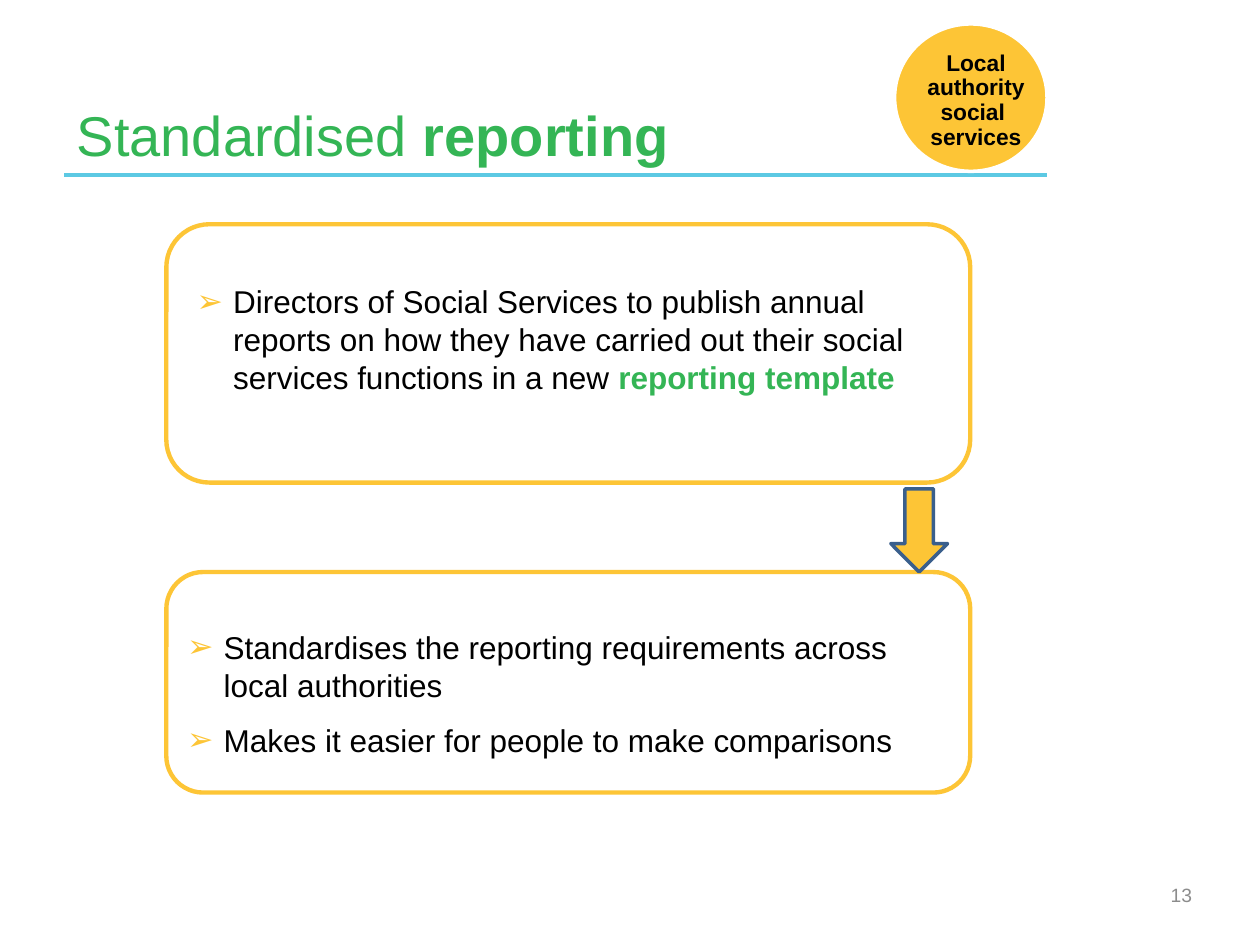
from dataclasses import dataclass
from typing import Optional

from lxml import etree
from pptx import Presentation
from pptx.dml.color import RGBColor
from pptx.enum.shapes import MSO_CONNECTOR, MSO_SHAPE
from pptx.enum.text import MSO_ANCHOR, MSO_AUTO_SIZE, PP_ALIGN
from pptx.oxml.ns import qn
from pptx.util import Inches, Pt

GREEN = RGBColor(0x34, 0xB5, 0x55)
YELLOW = RGBColor(0xFD, 0xC5, 0x36)
SKY = RGBColor(0x5C, 0xC9, 0xE3)
NAVY = RGBColor(0x3A, 0x5F, 0x8C)
GREY = RGBColor(0x8C, 0x8C, 0x8C)
BLACK = RGBColor(0, 0, 0)
WHITE = RGBColor(0xFF, 0xFF, 0xFF)

ROUNDED = MSO_SHAPE.ROUNDED_RECTANGLE
DOWN_ARROW = MSO_SHAPE.DOWN_ARROW
OVAL = MSO_SHAPE.OVAL
STRAIGHT = MSO_CONNECTOR.STRAIGHT
TOP, MIDDLE, BOTTOM = MSO_ANCHOR.TOP, MSO_ANCHOR.MIDDLE, MSO_ANCHOR.BOTTOM
LEFT, CENTER, RIGHT = PP_ALIGN.LEFT, PP_ALIGN.CENTER, PP_ALIGN.RIGHT
NO_AUTOFIT = MSO_AUTO_SIZE.NONE

FONT = "Arial"
BULLET = "➢"
BULLET_INDENT = Inches(0.29)


@dataclass
class Span:
    text: str
    size: float = 18
    color: RGBColor = BLACK
    bold: bool = False


@dataclass
class Panel:
    kind: int
    left: float
    top: float
    width: float
    height: float
    line: RGBColor
    line_width: float
    fill: Optional[RGBColor] = None


REPORT_PANEL = Panel(ROUNDED, 1.32, 1.78, 6.38, 2.05, YELLOW, 2.5)
BENEFIT_PANEL = Panel(ROUNDED, 1.32, 4.54, 6.38, 1.75, YELLOW, 2.5)
FLOW_ARROW = Panel(DOWN_ARROW, 7.07, 3.88, 0.45, 0.66, NAVY, 2, YELLOW)
BADGE = Panel(OVAL, 7.1, 0.19, 1.21, 1.17, WHITE, 2, YELLOW)

TITLE = [[Span("Standardised ", 32, GREEN), Span("reporting", 32, GREEN, True)]]
REPORT = [[
    Span("Directors of Social Services to publish annual reports on how they have "
         "carried out their social services functions in a new "),
    Span("reporting template", color=GREEN, bold=True),
]]
BENEFITS = [
    [Span("Standardises the reporting requirements across local authorities")],
    [Span("Makes it easier for people to make comparisons")],
]
BADGE_LINES = [[Span(word, 13, bold=True)]
               for word in ("Local", "authority", "social ", "services")]


def set_values(target, **values) -> None:
    for name, value in values.items():
        setattr(target, name, value)


def place(shape, left: float, top: float, width: float, height: float) -> None:
    set_values(shape, left=Inches(left), top=Inches(top),
               width=Inches(width), height=Inches(height))


def draw_panel(slide, panel: Panel):
    shape = slide.shapes.add_shape(
        panel.kind, Inches(panel.left), Inches(panel.top),
        Inches(panel.width), Inches(panel.height))
    shape.shadow.inherit = False
    if panel.fill is None:
        shape.fill.background()
    else:
        shape.fill.solid()
        shape.fill.fore_color.rgb = panel.fill
    shape.line.color.rgb = panel.line
    shape.line.width = Pt(panel.line_width)
    return shape


def draw_rule(slide, left: float, right: float, height: float) -> None:
    rule = slide.shapes.add_connector(
        STRAIGHT, Inches(left), Inches(height), Inches(right), Inches(height))
    rule.line.color.rgb = SKY
    rule.line.width = Pt(2)
    etree.SubElement(rule._element.spPr, qn("a:effectLst"))


def add_bullet(para) -> None:
    properties = para._p.get_or_add_pPr()
    properties.set("marL", str(BULLET_INDENT))
    properties.set("indent", str(-BULLET_INDENT))
    color = etree.SubElement(properties, qn("a:buClr"))
    etree.SubElement(color, qn("a:srgbClr")).set("val", str(YELLOW))
    etree.SubElement(properties, qn("a:buFont")).set("typeface", FONT)
    etree.SubElement(properties, qn("a:buChar")).set("char", BULLET)


def write(frame, lines: list[list[Span]], align: int = LEFT,
          bulleted: bool = False, spacing: float = 1.0) -> None:
    for index, spans in enumerate(lines):
        para = frame.paragraphs[0] if index == 0 else frame.add_paragraph()
        if bulleted:
            add_bullet(para)
        set_values(para, alignment=align, line_spacing=spacing,
                   space_before=Pt(3.6 if bulleted and index else 0),
                   space_after=Pt(6 if bulleted else 0))
        for span in spans:
            run = para.add_run()
            run.text = span.text
            set_values(run.font, name=FONT, size=Pt(span.size), bold=span.bold)
            run.font.color.rgb = span.color


def add_text_box(slide, left: float, top: float, width: float, height: float):
    return slide.shapes.add_textbox(
        Inches(left), Inches(top), Inches(width), Inches(height)).text_frame


def main() -> None:
    deck = Presentation()
    set_values(deck, slide_width=Inches(10), slide_height=Inches(7.5))
    slide = deck.slides.add_slide(deck.slide_layouts[1])

    draw_rule(slide, 0.51, 8.31, 1.39)
    title = slide.shapes.title
    place(title, 0.51, 0.29, 7.8, 1.09)
    set_values(title.text_frame, vertical_anchor=BOTTOM, auto_size=NO_AUTOFIT)
    write(title.text_frame, TITLE)

    draw_panel(slide, REPORT_PANEL)
    report = slide.placeholders[1]
    place(report, 1.46, 2.19, 5.84, 1.01)
    set_values(report.text_frame, vertical_anchor=TOP, auto_size=NO_AUTOFIT)
    write(report.text_frame, REPORT, bulleted=True)

    benefits = draw_panel(slide, BENEFIT_PANEL).text_frame
    set_values(benefits, vertical_anchor=TOP, word_wrap=True,
               margin_left=Inches(0.08), margin_right=Inches(0.08),
               margin_top=Inches(0.36), margin_bottom=Inches(0.08))
    write(benefits, BENEFITS, bulleted=True)

    draw_panel(slide, FLOW_ARROW)
    draw_panel(slide, BADGE)
    badge_text = add_text_box(slide, 7.25, 0.36, 0.99, 0.89)
    badge_text.word_wrap = False
    write(badge_text, BADGE_LINES, CENTER, spacing=0.9)

    page_number = add_text_box(slide, 7.23, 6.9, 2.33, 0.4)
    set_values(page_number, vertical_anchor=MIDDLE, word_wrap=True)
    write(page_number, [[Span("13", 11, GREY)]], RIGHT)

    deck.save("out.pptx")


if __name__ == "__main__":
    main()
